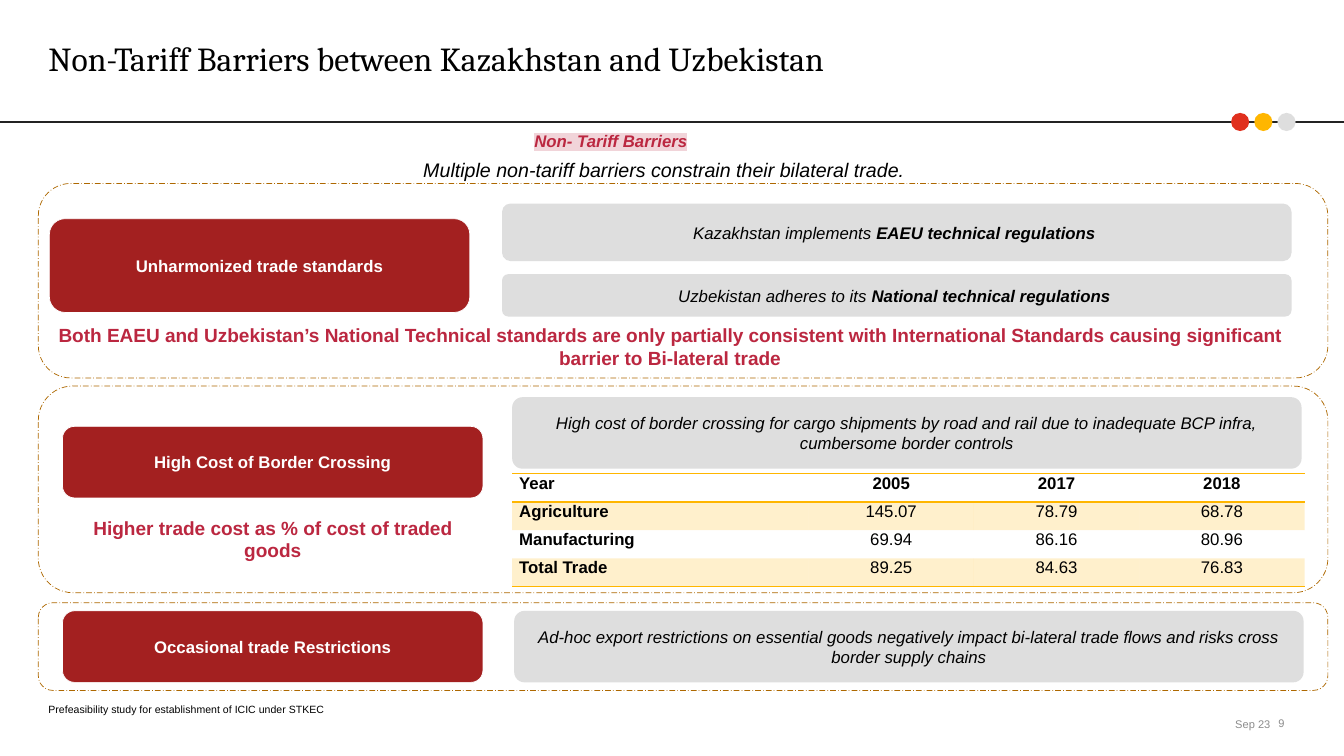
from lxml.etree import SubElement as Sub
from pptx import Presentation
from pptx.dml.color import RGBColor
from pptx.enum.dml import MSO_LINE as Dash
from pptx.enum.shapes import MSO_CONNECTOR as Conn, MSO_SHAPE as Kind
from pptx.enum.text import MSO_ANCHOR as Anchor, PP_ALIGN as Align
from pptx.oxml import parse_xml
from pptx.oxml.ns import nsdecls, qn
from pptx.util import Inches, Pt

BLACK = RGBColor(0x00, 0x00, 0x00)
WHITE = RGBColor(0xFF, 0xFF, 0xFF)
INK = RGBColor(0x23, 0x23, 0x23)
RED = RGBColor(0xE0, 0x30, 0x1E)
GOLD = RGBColor(0xFF, 0xB6, 0x00)
SILVER = RGBColor(0xDE, 0xDE, 0xDE)
BROWN = RGBColor(0xAE, 0x68, 0x00)
MAROON = RGBColor(0xA3, 0x20, 0x20)
ROSE = RGBColor(0xBB, 0x27, 0x40)
PINK = RGBColor(0xF1, 0xD4, 0xD9)
GREY = RGBColor(0x8C, 0x8C, 0x8C)
NO_GRID = "{2D5ABB26-0587-4C30-8999-92F81FD0307C}"


class Board:
    """Holds the style and the current slide."""

    def __init__(self, slide, face="Arial", size=12):
        self.slide, self.face, self.size = slide, face, size

    def style(self, run, size=None, color=BLACK, bold=False, slant=False, face=None):
        """Format one run."""
        font = run.font
        font.name = face or self.face
        font.size = Pt(size or self.size)
        font.bold, font.italic = bold, slant
        font.color.rgb = color

    def shape(self, kind, at, fill, line=None, dash=None):
        """Add a flat shape with an optional thin outline."""
        item = self.slide.shapes.add_shape(kind, *map(Inches, at))
        item.shadow.inherit = False
        item.fill.solid()
        item.fill.fore_color.rgb = fill
        if line is None:
            item.line.fill.background()
        else:
            item.line.color.rgb = line
            item.line.width = Pt(0.5)
            if dash:
                item.line.dash_style = dash
        return item

    def rule(self, y):
        """Add the full-width line under the title."""
        line = self.slide.shapes.add_connector(
            Conn.STRAIGHT, 0, Inches(y), Inches(13.33), Inches(y))
        line.line.color.rgb = INK
        line.line.width = Pt(2)
        Sub(line._element.spPr, qn("a:effectLst"))

    def panel(self, top, high):
        """Add a dashed frame."""
        self.shape(Kind.ROUNDED_RECTANGLE, (0.38, top, 12.79, high),
                   WHITE, BROWN, Dash.LONG_DASH_DOT)

    def label(self, left, top, high, text):
        """Add a maroon heading box."""
        item = self.shape(Kind.ROUNDED_RECTANGLE, (left, top, 4.17, high), MAROON, WHITE)
        frame = item.text_frame
        frame.text = text
        frame.vertical_anchor = Anchor.MIDDLE
        para = frame.paragraphs[0]
        para.alignment = Align.CENTER
        self.style(para.runs[0], color=WHITE, bold=True)

    def card(self, left, top, high, text, strong=None):
        """Add a grey box with italic text and an optional bold ending."""
        item = self.shape(Kind.ROUNDED_RECTANGLE, (left, top, 7.83, high), SILVER)
        item.adjustments[0] = 0.145
        frame = item.text_frame
        frame.text = text
        frame.vertical_anchor = Anchor.MIDDLE
        para = frame.paragraphs[0]
        para.alignment = Align.CENTER
        self.style(para.runs[0], slant=True)
        if strong:
            run = para.add_run()
            run.text = strong
            self.style(run, bold=True, slant=True)

    def text(self, at, text, align=Align.CENTER, anchor=Anchor.TOP,
             inset=(0, 0), mark=None, **look):
        """Add a text box, highlighted if a mark colour is given."""
        frame = self.slide.shapes.add_textbox(*map(Inches, at)).text_frame
        frame.word_wrap = True
        frame.margin_left = frame.margin_right = Inches(inset[0])
        frame.margin_top = frame.margin_bottom = Inches(inset[1])
        frame.vertical_anchor = anchor
        frame.text = text
        para = frame.paragraphs[0]
        para.alignment = align
        run = para.runs[0]
        self.style(run, **look)
        if mark:
            fill = run.font._element.find(qn("a:solidFill"))
            fill.addnext(parse_xml(
                f'<a:highlight {nsdecls("a")}><a:srgbClr val="{mark}"/></a:highlight>'))

    def edge(self, cell, tag):
        """Draw one gold border of a cell."""
        cell._tc.get_or_add_tcPr().insert(0, parse_xml(
            f'<a:{tag} {nsdecls("a")} w="12700"><a:solidFill>'
            f'<a:srgbClr val="{GOLD}"/></a:solidFill></a:{tag}>'))

    def table(self, at, rows, cols, high):
        """Add the banded cost table."""
        grid = self.slide.shapes.add_table(
            len(rows), len(cols), *map(Inches, at)).table
        grid._tbl.tblPr.find(qn("a:tableStyleId")).text = NO_GRID
        for col, wide in zip(grid.columns, cols):
            col.width = Inches(wide)
        for r, row in enumerate(rows):
            grid.rows[r].height = Inches(high)
            for c, word in enumerate(row):
                cell = grid.cell(r, c)
                cell.text = word
                cell.margin_left = cell.margin_right = Inches(0.07)
                cell.margin_top = cell.margin_bottom = 0
                para = cell.text_frame.paragraphs[0]
                para.alignment = Align.CENTER if c else Align.JUSTIFY
                self.style(para.runs[0], bold=r == 0 or c == 0)
                if r % 2:
                    cell.fill.solid()
                    cell.fill.fore_color.rgb = GOLD
                    tint = cell._tc.tcPr.find(".//" + qn("a:srgbClr"))
                    Sub(tint, qn("a:alpha")).set("val", "20000")
                else:
                    cell.fill.background()
                if r in (0, len(rows) - 1):
                    self.edge(cell, "lnB")
                if r == 0:
                    self.edge(cell, "lnT")


def main():
    """Build the slide."""
    deck = Presentation()
    deck.slide_width, deck.slide_height = Inches(13.33), Inches(7.5)
    board = Board(deck.slides.add_slide(deck.slide_layouts[6]))

    board.rule(1.21)
    for i, color in enumerate((RED, GOLD, SILVER)):
        board.shape(Kind.OVAL, (12.21 + 0.23 * i, 1.12, 0.18, 0.18), color)
    for top, high in ((5.98, 0.87), (3.83, 2.05), (1.82, 1.93)):
        board.panel(top, high)

    board.text((0.48, 0.38, 12.36, 0.4),
               "Non-Tariff Barriers between Kazakhstan and Uzbekistan",
               Align.LEFT, Anchor.MIDDLE, size=24, face="Cambria")
    board.text((0.38, 1.57, 12.47, 0.71),
               "Multiple non-tariff barriers constrain their bilateral trade. ",
               size=14, slant=True)
    board.text((1.31, 1.3, 9.5, 0.2), "Non- Tariff Barriers",
               mark=PINK, color=ROSE, bold=True, slant=True)

    board.label(0.49, 2.17, 0.93, "Unharmonized trade standards")
    board.card(4.98, 2.02, 0.57, "Kazakhstan implements ", "EAEU technical regulations ")
    board.card(4.98, 2.72, 0.42, "Uzbekistan adheres to its ",
               "National technical regulations ")
    board.text((0.48, 3.21, 12.33, 0.46),
               "Both EAEU and Uzbekistan’s National Technical standards are only "
               "partially consistent with International Standards causing "
               "significant barrier to Bi-lateral trade",
               size=13.6, color=ROSE, bold=True)

    board.label(0.62, 4.23, 0.71, "High Cost of Border Crossing")
    board.card(5.08, 3.94, 0.71,
               "High cost of border crossing for cargo shipments by road and rail "
               "due to inadequate BCP infra, cumbersome border controls")
    board.text((0.62, 5.12, 4.17, 0.46),
               "Higher trade cost as % of cost of traded goods",
               size=13.6, color=ROSE, bold=True)
    board.table((5.08, 4.7, 7.87, 1.12), (
        ("Year", "2005", "2017", "2018"),
        ("Agriculture", "145.07", "78.79", "68.78"),
        ("Manufacturing", "69.94", "86.16", "80.96"),
        ("Total Trade", "89.25", "84.63", "76.83"),
    ), (2.94, 1.64, 1.64, 1.64), 0.28)

    board.label(0.62, 6.06, 0.71, "Occasional trade Restrictions")
    board.card(5.1, 6.06, 0.71,
               "Ad-hoc export restrictions on essential goods negatively impact "
               "bi-lateral trade flows and risks cross border supply chains")

    board.text((10.67, 7.1, 1.93, 0.15), "Sep 23", Align.RIGHT, Anchor.BOTTOM,
               size=7.9, color=GREY)
    board.text((10.92, 7.1, 1.93, 0.15), "9", Align.RIGHT, Anchor.MIDDLE,
               (0.11, 0.06), size=7.9, color=GREY)
    board.text((0.48, 6.95, 5.99, 0.15),
               "Prefeasibility study for establishment of ICIC under STKEC",
               Align.LEFT, Anchor.BOTTOM, size=7.5)
    deck.save("out.pptx")


if __name__ == "__main__":
    main()
